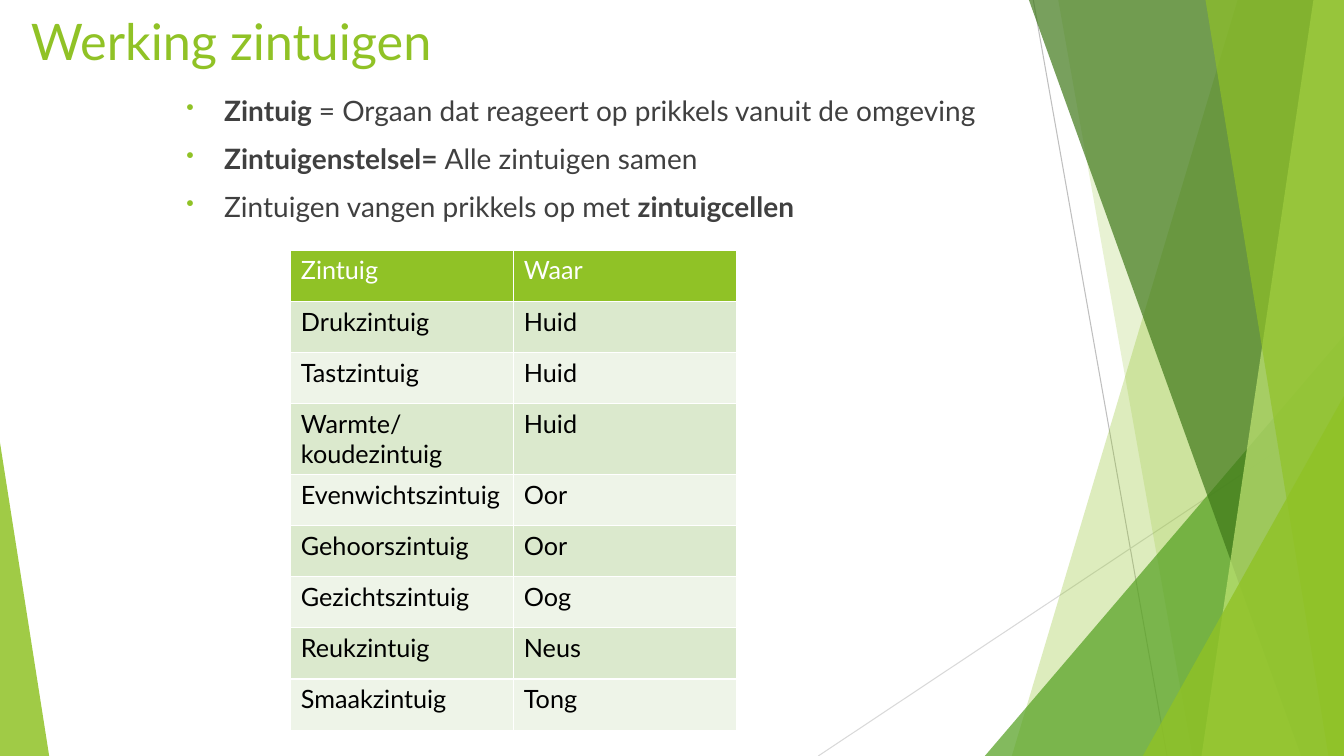
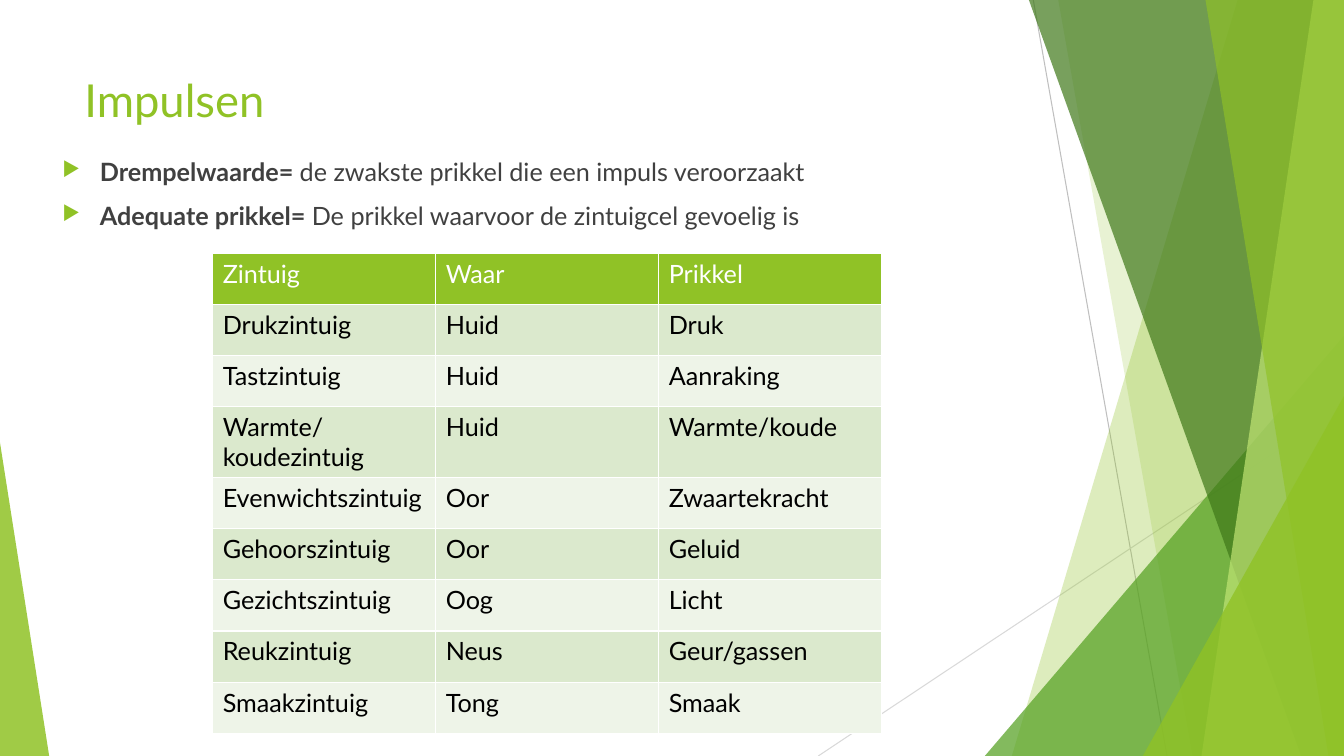
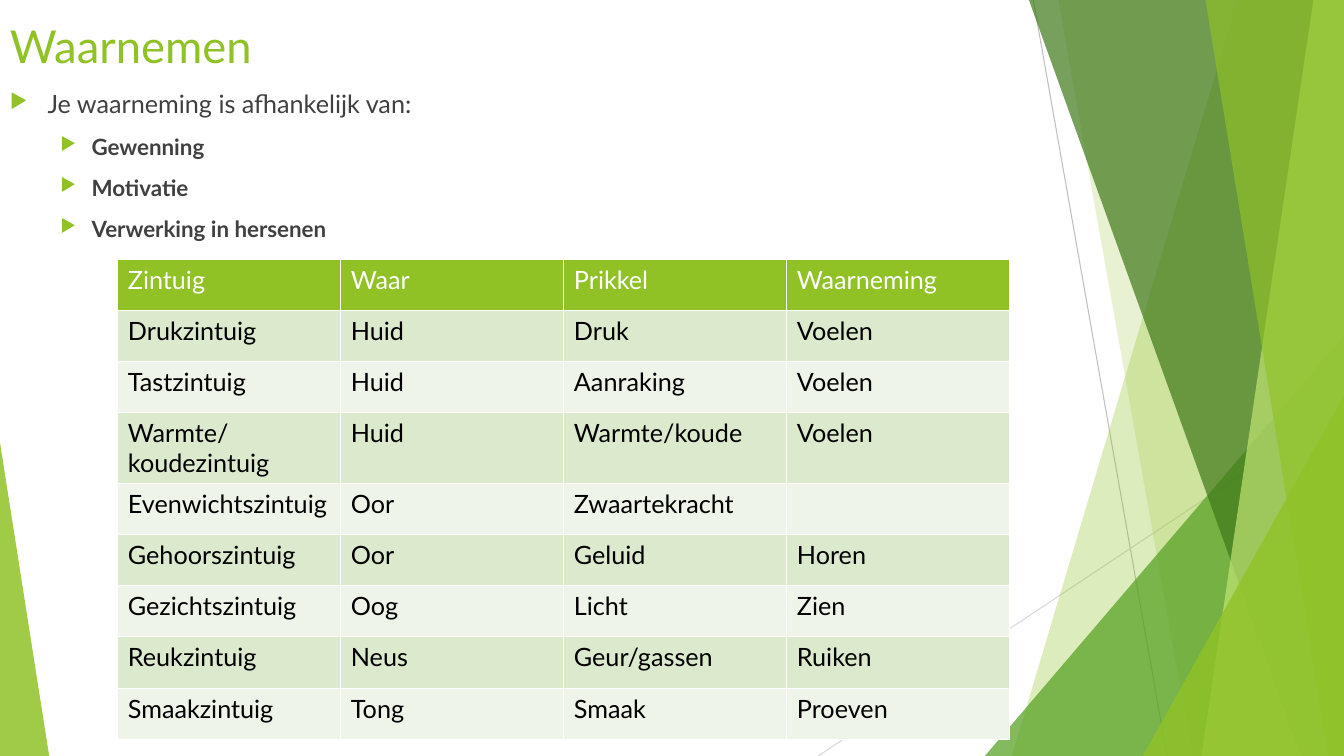
from lxml import etree
from pptx import Presentation
from pptx.dml.color import RGBColor
from pptx.enum.shapes import MSO_CONNECTOR, MSO_SHAPE
from pptx.oxml.ns import qn
from pptx.util import Cm, Pt

LINE = MSO_CONNECTOR.STRAIGHT
TRI = MSO_SHAPE.ISOSCELES_TRIANGLE
FONT = "Lato"
WIDE, HIGH = 33.87, 19.05
COL, ROW = 5.62, 1.29

INK = {
    "lime": "90C226", "leaf": "54A021", "moss": "3F7819", "pale": "C0E474",
    "text": "404040", "black": "000000", "white": "FFFFFF",
    "band": "DBE9CD", "soft": "EEF4E8", "grey": "BFBFBF", "mist": "D9D9D9",
}

# Shared decoration: lines, then facets from back to front
LINES = [(26.04, 0, 29.41, HIGH, "grey"), (WIDE, 10.24, 20.62, HIGH, "mist")]
FACETS = [  # quad: top left x, bottom left x; tri: left, top, width, peak
    ("quad", (31.19, 25.5), "lime", 30),
    ("quad", (26.67, 30.05), "lime", 20),
    ("tri", (24.82, 8.46, 9.05, 1), "leaf", 72),
    ("quad", (25.93, 32.79), "moss", 70),
    ("quad", (33.1, 30.28), "pale", 70),
    ("quad", (30.38, 33.48), "lime", 65),
    ("tri", (28.8, 9.98, 5.07, 1), "lime", 80),
    ("tri", (0, 11.15, 1.24, 0), "lime", 85),
]

# Bullet levels: left margin, hanging indent
LEVELS = [(0.95, 0.95), (2.06, 0.79)]

SENSES = [
    ("Zintuig", "Waar", "Prikkel", "Waarneming"),
    ("Drukzintuig", "Huid", "Druk", "Voelen"),
    ("Tastzintuig", "Huid", "Aanraking", "Voelen"),
    ("Warmte/koudezintuig", "Huid", "Warmte/koude", "Voelen"),
    ("Evenwichtszintuig", "Oor", "Zwaartekracht", ""),
    ("Gehoorszintuig", "Oor", "Geluid", "Horen"),
    ("Gezichtszintuig", "Oog", "Licht", "Zien"),
    ("Reukzintuig", "Neus", "Geur/gassen", "Ruiken"),
    ("Smaakzintuig", "Tong", "Smaak", "Proeven"),
]

# Each body line: level, size, runs of (text, bold)
SLIDES = [
    {
        "title": "Werking zintuigen", "size": 36, "head": (0.53, 0.13, 19.5, 3.18),
        "mark": "•", "body": (4.45, 2.24, 21.67, 14.53),
        "lines": [
            (0, 20, [("Zintuig ", True),
                     ("= Orgaan dat reageert op prikkels vanuit de omgeving", False)]),
            (0, 20, [("Zintuigenstelsel= ", True), ("Alle zintuigen samen", False)]),
            (0, 20, [("Zintuigen vangen prikkels op met ", False),
                     ("zintuigcellen", True)]),
        ],
        "grid": (7.33, 6.3), "cols": 2,
    },
    {
        "title": "Impulsen", "size": 32.4, "head": (1.88, 1.7, 23.88, 1.68),
        "mark": "▶", "body": (1.32, 3.81, 23.88, 10.77),
        "lines": [
            (0, 18, [("Drempelwaarde= ", True),
                     ("de zwakste prikkel die een impuls veroorzaakt", False)]),
            (0, 18, [("Adequate prikkel= ", True),
                     ("De prikkel waarvoor de zintuigcel gevoelig is", False)]),
        ],
        "grid": (5.36, 6.38), "cols": 3,
    },
    {
        "title": "Waarnemen", "size": 32.4, "head": (0, 0.33, 23.88, 1.68),
        "mark": "▶", "body": (0, 2.11, 23.88, 10.77),
        "lines": [
            (0, 18, [("Je waarneming is afhankelijk van:", False)]),
            (1, 16, [("Gewenning", True)]),
            (1, 16, [("Motivatie", True)]),
            (1, 16, [("Verwerking in hersenen", True)]),
        ],
        "grid": (2.97, 6.53), "cols": 4,
    },
]


def write(para, text, size, ink, bold=False):
    run = para.add_run()
    run.text = text
    for key, val in {"name": FONT, "size": Pt(size), "bold": bold}.items():
        setattr(run.font, key, val)
    run.font.color.rgb = RGBColor.from_string(INK[ink])


def node(top, tag, **attrs):
    return etree.SubElement(top, qn(tag), attrs)


prs = Presentation()
prs.slide_width, prs.slide_height = Cm(WIDE), Cm(HIGH)

for page in SLIDES:
    slide = prs.slides.add_slide(prs.slide_layouts[6])
    shapes = slide.shapes

    # Thin lines
    for x1, y1, x2, y2, ink in LINES:
        line = shapes.add_connector(LINE, Cm(x1), Cm(y1), Cm(x2), Cm(y2))
        line.line.color.rgb = RGBColor.from_string(INK[ink])
        line.line.width = Pt(0.75)
        node(line._element.spPr, "a:effectLst")

    # Translucent facets
    for kind, dims, ink, alpha in FACETS:
        if kind == "quad":
            top, low = dims
            form = shapes.build_freeform(Cm(top), 0)
            form.add_line_segments(
                [(Cm(WIDE), 0), (Cm(WIDE), Cm(HIGH)), (Cm(low), Cm(HIGH))], close=True)
            facet = form.convert_to_shape()
        else:
            x, y, wide, peak = dims
            facet = shapes.add_shape(TRI, Cm(x), Cm(y), Cm(wide), Cm(HIGH - y))
            facet.adjustments[0] = peak
        facet.shadow.inherit = False
        facet.line.fill.background()
        facet.fill.solid()
        facet.fill.fore_color.rgb = RGBColor.from_string(INK[ink])
        tint = facet._element.spPr.find(".//" + qn("a:srgbClr"))
        node(tint, "a:alpha", val=str(alpha * 1000))

    # Title
    head = shapes.add_textbox(*map(Cm, page["head"])).text_frame
    head.word_wrap = True
    write(head.paragraphs[0], page["title"], page["size"], "lime")

    # Bulleted body
    body = shapes.add_textbox(*map(Cm, page["body"])).text_frame
    body.word_wrap = True
    for i, (level, size, runs) in enumerate(page["lines"]):
        para = body.add_paragraph() if i else body.paragraphs[0]
        para.level = level
        para.space_before = Pt(10 if i else 0)
        left, hang = LEVELS[level]
        props = para._p.get_or_add_pPr()
        props.set("marL", str(Cm(left)))
        props.set("indent", str(-Cm(hang)))
        node(node(props, "a:buClr"), "a:srgbClr", val=INK["lime"])
        node(props, "a:buSzPct", val="80000")
        node(props, "a:buChar", char=page["mark"])
        for text, bold in runs:
            write(para, text, size, "text", bold)

    # Table of senses
    x, y = page["grid"]
    cols, rows = page["cols"], len(SENSES)
    grid = shapes.add_table(
        rows, cols, Cm(x), Cm(y), Cm(COL * cols), Cm(ROW * rows)).table
    for col in grid.columns:
        col.width = Cm(COL)
    for r, sense in enumerate(SENSES):
        grid.rows[r].height = Cm(ROW)
        back = "lime" if r == 0 else "band" if r % 2 else "soft"
        for c, text in enumerate(sense[:cols]):
            cell = grid.cell(r, c)
            props = cell._tc.get_or_add_tcPr()
            for side in "LRTB":
                edge = node(props, "a:ln" + side, w=str(Pt(1)))
                node(node(edge, "a:solidFill"), "a:srgbClr", val=INK["white"])
            cell.fill.solid()
            cell.fill.fore_color.rgb = RGBColor.from_string(INK[back])
            if text:
                write(cell.text_frame.paragraphs[0], text, 18,
                      "black" if r else "white")

prs.save("out.pptx")
